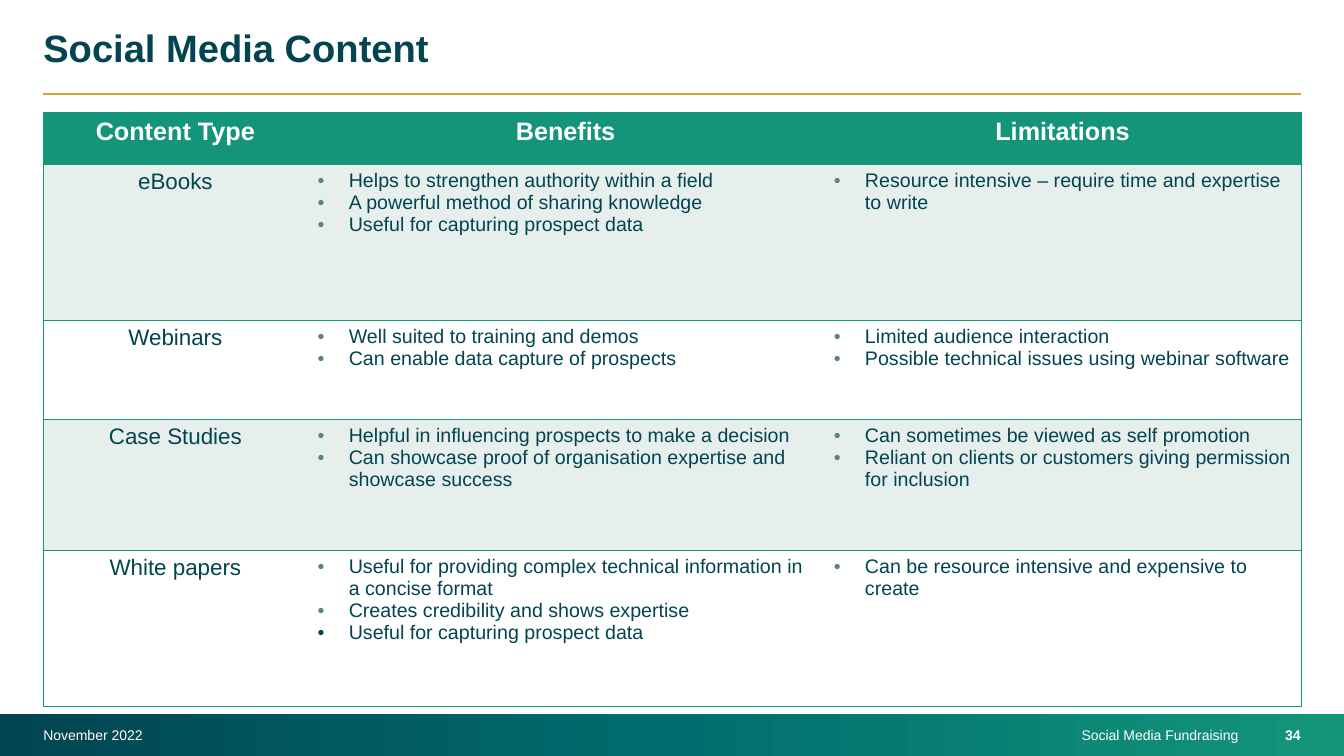
from copy import deepcopy
from dataclasses import dataclass

from lxml.etree import SubElement
from pptx import Presentation
from pptx.dml.color import RGBColor
from pptx.enum.shapes import MSO_CONNECTOR, MSO_SHAPE
from pptx.enum.text import PP_ALIGN
from pptx.oxml.ns import qn
from pptx.util import Inches, Pt


@dataclass(frozen=True)
class Theme:
    font: str = "Arial"
    dark: str = "024450"
    teal: str = "006E6E"
    green: str = "14957A"
    gold: str = "CDA53C"
    band: str = "E7EFEC"
    white: str = "FFFFFF"
    bullet: str = "5A8389"
    title: float = 27.2
    header: int = 18
    label: int = 16
    body: int = 14
    footer: int = 10


THEME = Theme()
LEFT, RIGHT = 0.43, 12.9
COLUMNS = [2.62, 5.12, 4.74]
ROW_HEIGHTS = [0.51, 1.55, 0.98, 1.3, 1.55]
HEADERS = ["Content Type", "Benefits", "Limitations"]
CONTENT = [
    ("eBooks",
     ["Helps to strengthen authority within a field",
      "A powerful method of sharing knowledge",
      "Useful for capturing prospect data"],
     ["Resource intensive – require time and expertise to write"]),
    ("Webinars",
     ["Well suited to training and demos",
      "Can enable data capture of prospects"],
     ["Limited audience interaction",
      "Possible technical issues using webinar software"]),
    ("Case Studies",
     ["Helpful in influencing prospects to make a decision",
      "Can showcase proof of organisation expertise and showcase success"],
     ["Can sometimes be viewed as self promotion",
      "Reliant on clients or customers giving permission for inclusion"]),
    ("White papers",
     ["Useful for providing complex technical information in a concise format",
      "Creates credibility and shows expertise",
      "Useful for capturing prospect data"],
     ["Can be resource intensive and expensive to create"]),
]


def rgb(value):
    return RGBColor.from_string(value)


def write(p, text, size, color, bold=False, align=PP_ALIGN.LEFT):
    p.alignment = align
    r = p.add_run()
    r.text = text
    font = {"name": THEME.font, "size": Pt(size), "bold": bold}
    for name, value in font.items():
        setattr(r.font, name, value)
    r.font.color.rgb = rgb(color)


def add_text(s, box, text, size, color, **style):
    tf = s.shapes.add_textbox(*map(Inches, box)).text_frame
    frame = {"word_wrap": True, "margin_left": 0, "margin_right": 0,
             "margin_top": 0, "margin_bottom": 0}
    for name, value in frame.items():
        setattr(tf, name, value)
    p = tf.paragraphs[0]
    p.line_spacing = 0.9
    write(p, text, size, color, **style)


def add_footer_bar(s):
    sp = s.shapes.add_shape(MSO_SHAPE.RECTANGLE, 0, Inches(7.08),
                            Inches(13.33), Inches(0.42))
    sp.shadow.inherit = False
    sp.line.fill.background()
    sp.fill.gradient()
    sp.fill.gradient_angle = 0
    stop_list = sp._element.spPr.find(qn("a:gradFill")).find(qn("a:gsLst"))
    stop_list.append(deepcopy(stop_list[-1]))
    colors = [THEME.dark, THEME.teal, THEME.green]
    for i, (stop, color) in enumerate(zip(sp.fill.gradient_stops, colors)):
        stop.position = i / 2
        stop.color.rgb = rgb(color)


def add_rule(s, y):
    line = s.shapes.add_connector(MSO_CONNECTOR.STRAIGHT, Inches(LEFT),
                                  Inches(y), Inches(RIGHT), Inches(y))
    line.line.color.rgb = rgb(THEME.gold)
    line.line.width = Pt(1.5)
    SubElement(line._element.spPr, qn("a:effectLst"))


def add_solid(parent, color):
    fill = SubElement(parent, qn("a:solidFill"))
    SubElement(fill, qn("a:srgbClr"), val=color)


def set_borders(cell, visible):
    """Draw the sides named in visible and clear the others."""
    tc_pr = cell._tc.get_or_add_tcPr()
    for i, side in enumerate("LRTB"):
        ln = SubElement(tc_pr, qn(f"a:ln{side}"), w=str(Pt(1)))
        if side in visible:
            add_solid(ln, THEME.green)
        else:
            SubElement(ln, qn("a:noFill"))
        tc_pr.insert(i, ln)


def set_bullet(p, color):
    p_pr = p._p.get_or_add_pPr()
    p_pr.set("marL", str(Inches(0.31)))
    p_pr.set("indent", str(-Inches(0.31)))
    bullet_color = SubElement(p_pr, qn("a:buClr"))
    SubElement(bullet_color, qn("a:srgbClr"), val=color)
    SubElement(p_pr, qn("a:buFont"), typeface=THEME.font)
    SubElement(p_pr, qn("a:buChar"), char="•")


def fill_bullets(cell, items, last_color=THEME.bullet):
    tf = cell.text_frame
    for i, item in enumerate(items):
        p = tf.add_paragraph() if i else tf.paragraphs[0]
        write(p, item, THEME.body, THEME.dark)
        set_bullet(p, last_color if i == len(items) - 1 else THEME.bullet)


def add_content_table(s):
    table = s.shapes.add_table(
        len(ROW_HEIGHTS), len(COLUMNS), Inches(LEFT), Inches(1.12),
        Inches(sum(COLUMNS)), Inches(sum(ROW_HEIGHTS))).table
    table.horz_banding = False
    for column, width in zip(table.columns, COLUMNS):
        column.width = Inches(width)
    for row, height in zip(table.rows, ROW_HEIGHTS):
        row.height = Inches(height)

    # Fills and borders
    for r in range(len(ROW_HEIGHTS)):
        color = THEME.band if r % 2 else THEME.white
        for c, sides in enumerate(["LTB", "TB", "RTB"]):
            cell = table.cell(r, c)
            cell.fill.solid()
            cell.fill.fore_color.rgb = rgb(color if r else THEME.green)
            set_borders(cell, sides)

    # Header row
    for c, text in enumerate(HEADERS):
        write(table.cell(0, c).text_frame.paragraphs[0], text, THEME.header,
              THEME.white, bold=True, align=PP_ALIGN.CENTER)

    # Content rows; the closing benefit has a dark bullet
    for r, (label, benefits, limitations) in enumerate(CONTENT, 1):
        write(table.cell(r, 0).text_frame.paragraphs[0], label, THEME.label,
              THEME.dark, align=PP_ALIGN.CENTER)
        last_color = THEME.dark if r == len(CONTENT) else THEME.bullet
        fill_bullets(table.cell(r, 1), benefits, last_color)
        fill_bullets(table.cell(r, 2), limitations)


def main():
    prs = Presentation()
    prs.slide_width, prs.slide_height = Inches(13.33), Inches(7.5)
    s = prs.slides.add_slide(prs.slide_layouts[6])

    # Frame
    add_footer_bar(s)
    add_rule(s, 0.93)

    # Footer texts
    for x, width, text, style in [
        (LEFT, 5.36, "November 2022", {}),
        (6.03, 6.25, "Social Media Fundraising", {"align": PP_ALIGN.RIGHT}),
        (12.37, 0.53, "34", {"align": PP_ALIGN.RIGHT, "bold": True}),
    ]:
        add_text(s, (x, 7.23, width, 0.14), text, THEME.footer, THEME.white,
                 **style)

    # Title and table
    add_text(s, (LEFT, 0.29, 12.48, 0.61), "Social Media Content",
             THEME.title, THEME.dark, bold=True)
    add_content_table(s)
    prs.save("out.pptx")


if __name__ == "__main__":
    main()
